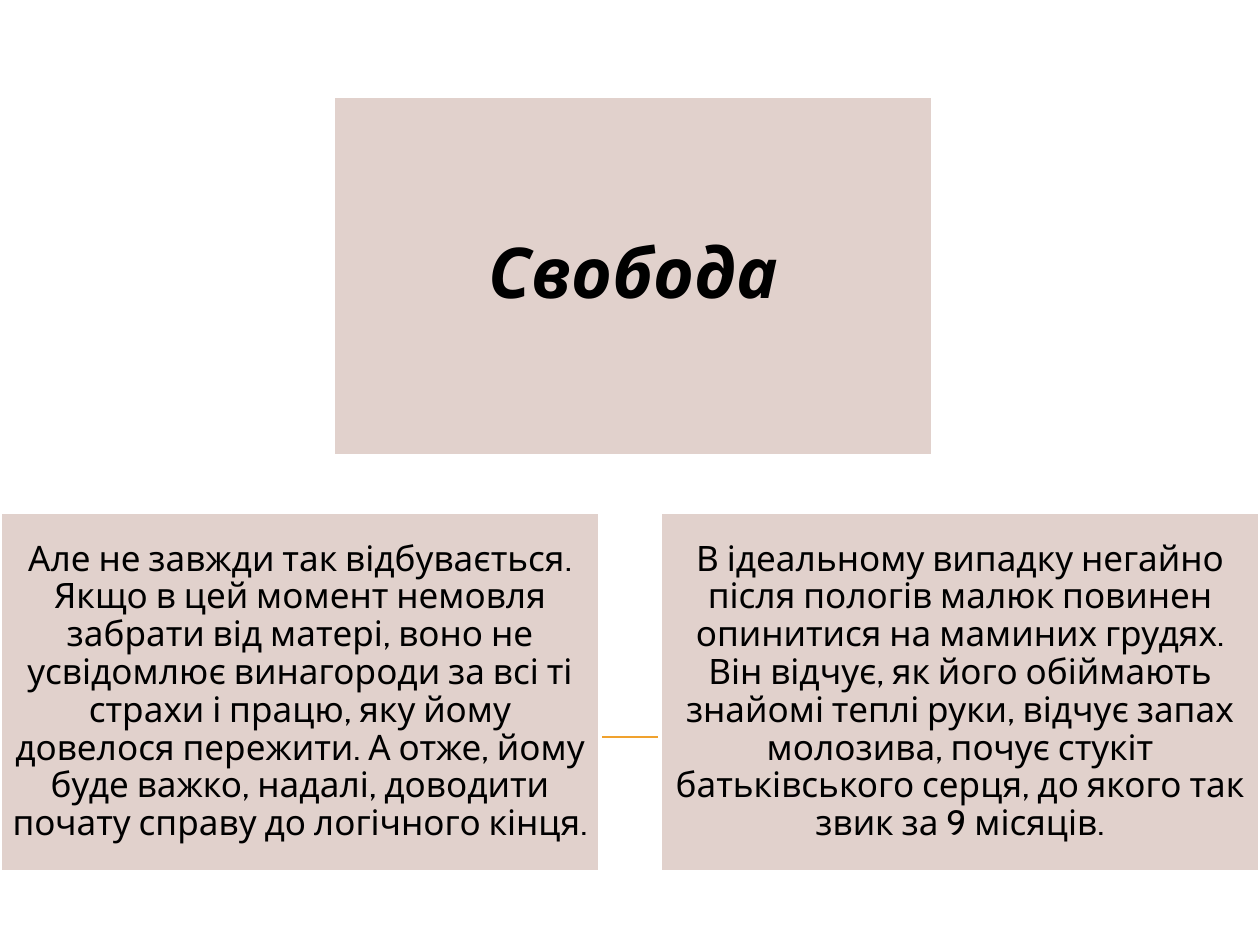
from dataclasses import dataclass
from lxml import etree
from pptx import Presentation, util as u
from pptx.dml.color import RGBColor
from pptx.enum import shapes, text
from pptx.oxml.ns import qn

SCALE = 914400 / 126  # EMU in one px


@dataclass(frozen=True)
class Theme:
    card: RGBColor = RGBColor(0xE1, 0xD1, 0xCC)
    edge: RGBColor = RGBColor(0xFF, 0xFF, 0xFF)
    ink: RGBColor = RGBColor(0, 0, 0)
    rule: RGBColor = RGBColor(0xF0, 0xA2, 0x2E)
    face: str = "Cabin"
    head: int = 40
    body: int = 20


@dataclass(frozen=True)
class Card:
    slot: int  # placeholder index
    left: int
    top: int
    inset: int
    size: int
    words: str
    strong: bool = False


def px(n: int) -> int:
    return round(n * SCALE)


def apply(item, values: dict) -> None:
    for name, value in values.items():
        setattr(item, name, value)


LOOK = Theme()
WIDE, HIGH = 1260, 945
CARD_W, CARD_H = 600, 360
LOW = 512

CARDS = [
    Card(0, 333, 96, 21, LOOK.head, "Свобода", True),
    Card(1, 0, LOW, 10, LOOK.body,
         "Але не завжди так відбувається. Якщо в цей момент немовля забрати "
         "від матері, воно не усвідомлює винагороди за всі ті страхи і працю, "
         "яку йому довелося пережити. А отже, йому буде важко, надалі, "
         "доводити почату справу до логічного кінця."),
    Card(2, WIDE - CARD_W, LOW, 10, LOOK.body,
         "В ідеальному випадку негайно після пологів малюк повинен опинитися "
         "на маминих грудях. Він відчує, як його обіймають знайомі теплі руки, "
         "відчує запах молозива, почує стукіт батьківського серця, до якого "
         "так звик за 9 місяців."),
]


def draw_card(slide, card: Card) -> None:
    box = slide.placeholders[card.slot]
    apply(box, dict(left=px(card.left), top=px(card.top),
                    width=px(CARD_W), height=px(CARD_H)))
    box.fill.solid()
    box.fill.fore_color.rgb = LOOK.card
    box.line.color.rgb = LOOK.edge
    box.line.width = u.Pt(2)

    frame = box.text_frame
    sides = ("left", "top", "right", "bottom")
    apply(frame, {f"margin_{side}": px(card.inset) for side in sides})
    apply(frame, dict(word_wrap=True, auto_size=text.MSO_AUTO_SIZE.NONE,
                      vertical_anchor=text.MSO_ANCHOR.MIDDLE))

    # Plain centred paragraph, no bullet or indent
    para = frame.paragraphs[0]
    props = para._p.get_or_add_pPr()
    props.set("marL", "0")
    props.set("indent", "0")
    etree.SubElement(props, qn("a:buNone"))
    apply(para, dict(alignment=text.PP_ALIGN.CENTER, line_spacing=0.9,
                     space_before=u.Pt(0)))
    run = para.add_run()
    run.text = card.words
    apply(run.font, dict(name=LOOK.face, size=u.Pt(card.size),
                         bold=card.strong, italic=card.strong))
    run.font.color.rgb = LOOK.ink


def draw_rule(slide, left: int, right: int, y: int) -> None:
    rule = slide.shapes.add_connector(
        shapes.MSO_CONNECTOR.STRAIGHT, px(left), px(y), px(right), px(y))
    rule.line.color.rgb = LOOK.rule
    rule.line.width = u.Pt(0.75)
    etree.SubElement(rule._element.spPr, qn("a:effectLst"))
    slide.shapes._spTree.insert(2, rule._element)  # behind the cards


def main() -> None:
    deck = Presentation()
    apply(deck, dict(slide_width=px(WIDE), slide_height=px(HIGH)))
    slide = deck.slides.add_slide(deck.slide_layouts.get_by_name("Two Content"))

    # Title card above two text cards
    for card in CARDS:
        draw_card(slide, card)

    # Thin rule that shows between the lower cards
    draw_rule(slide, 71, WIDE, 737)
    deck.save("out.pptx")


if __name__ == "__main__":
    main()
